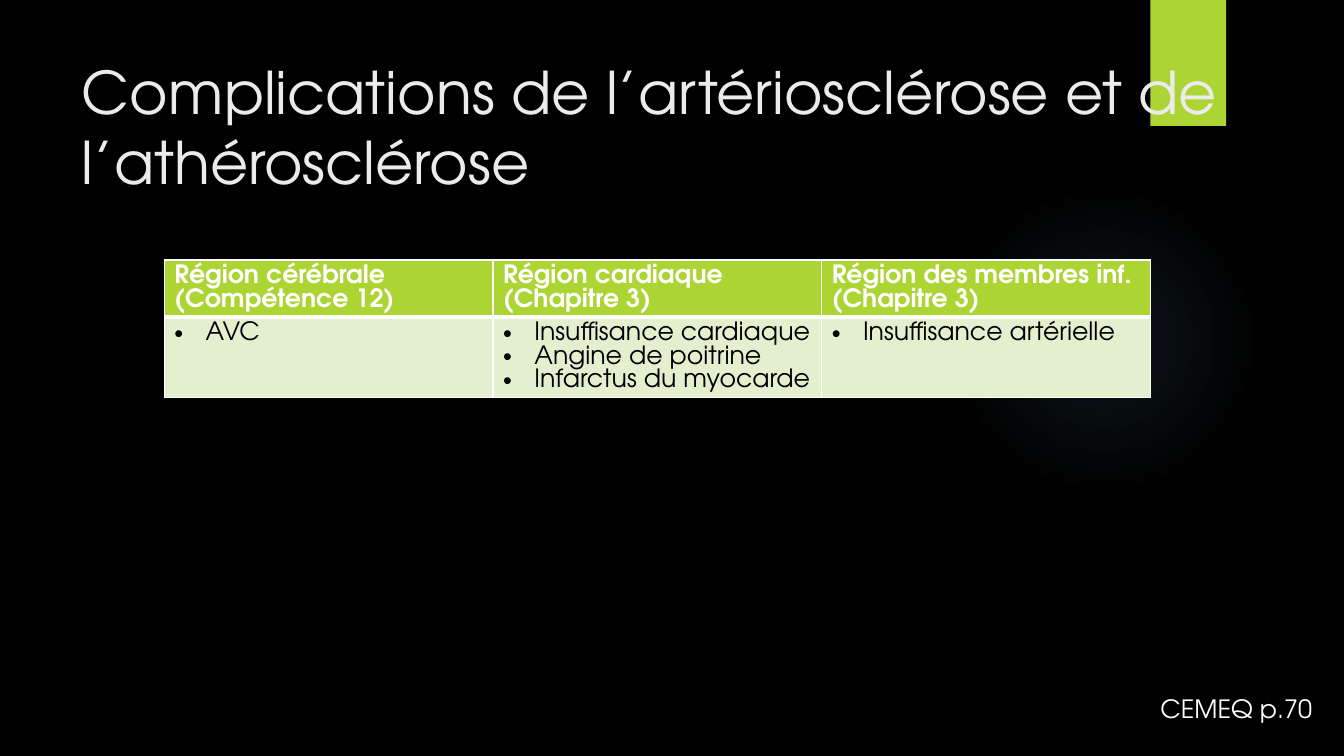
import lxml.etree
import pptx
import pptx.dml.color
import pptx.enum.shapes
import pptx.enum.text
import pptx.oxml
import pptx.oxml.ns
import pptx.util

BLACK = pptx.dml.color.RGBColor(0x00, 0x00, 0x00)
WHITE = pptx.dml.color.RGBColor(0xFF, 0xFF, 0xFF)
PALE_GREY = pptx.dml.color.RGBColor(0xEB, 0xEB, 0xEB)
LIME = pptx.dml.color.RGBColor(0xAC, 0xD4, 0x33)
PALE_LIME = pptx.dml.color.RGBColor(0xE3, 0xEF, 0xCE)
GLOW_BLUE = pptx.dml.color.RGBColor(0x7A, 0xC4, 0xF0)
FONT = "TeX Gyre Adventor"
GLOW_STOPS = [(0, 7), (36, 6), (69, 0)]
REGIONS = [
    (["Région cérébrale", "(Compétence 12)"], ["AVC"]),
    (["Région cardiaque (Chapitre 3)"],
     ["Insuffisance cardiaque", "Angine de poitrine", "Infarctus du myocarde"]),
    (["Région des membres inf.", "(Chapitre 3)"], ["Insuffisance artérielle"]),
]

deck = pptx.Presentation()
deck.slide_width = pptx.util.Inches(13.33)
deck.slide_height = pptx.util.Inches(7.5)
slide = deck.slides.add_slide(deck.slide_layouts[5])
slide.background.fill.solid()
slide.background.fill.fore_color.rgb = BLACK


def area(left, top, width, height):
    return (int(deck.slide_width * left / 100), int(deck.slide_height * top / 100),
            int(deck.slide_width * width / 100), int(deck.slide_height * height / 100))


def write(paragraph, wording, size, color, bold=False):
    run = paragraph.add_run()
    run.text = wording
    run.font.name = FONT
    run.font.size = pptx.util.Pt(size)
    run.font.color.rgb = color
    run.font.bold = bold


glow = slide.shapes.add_shape(
    pptx.enum.shapes.MSO_SHAPE.OVAL, *area(70.59, 24.4, 23.11, 41.07))
glow.shadow.inherit = False
glow.line.fill.background()
stops = "".join(
    f'<a:gs pos="{place * 1000}"><a:srgbClr val="{GLOW_BLUE}">'
    f'<a:alpha val="{opacity * 1000}"/></a:srgbClr></a:gs>'
    for place, opacity in GLOW_STOPS)
glow_fill = pptx.oxml.parse_xml(
    f'<a:gradFill {pptx.oxml.ns.nsdecls("a")} rotWithShape="1"><a:gsLst>{stops}</a:gsLst>'
    '<a:path path="circle"><a:fillToRect l="50000" t="50000" r="50000" b="50000"/></a:path>'
    '</a:gradFill>')
glow._element.spPr.find(pptx.oxml.ns.qn("a:prstGeom")).addnext(glow_fill)

ribbon = slide.shapes.add_shape(
    pptx.enum.shapes.MSO_SHAPE.RECTANGLE, *area(85.6, 0, 5.63, 16.67))
ribbon.shadow.inherit = False
ribbon.fill.solid()
ribbon.fill.fore_color.rgb = LIME
ribbon.line.fill.background()

title = slide.shapes.title
slide.shapes._spTree.append(title._element)
title.left, title.top, title.width, title.height = area(5.33, 6.67, 87.47, 20.4)
title.text_frame.word_wrap = True
title.text_frame.auto_size = pptx.enum.text.MSO_AUTO_SIZE.NONE
title.text_frame.vertical_anchor = pptx.enum.text.MSO_ANCHOR.TOP
title_line = title.text_frame.paragraphs[0]
title_line.alignment = pptx.enum.text.PP_ALIGN.LEFT
write(title_line, "Complications de l’artériosclérose et de l’athérosclérose", 42, PALE_GREY)

complications = slide.shapes.add_table(
    2, len(REGIONS), *area(12.23, 34.4, 73.37, 10.93)).table
for column, region in enumerate(REGIONS):
    for row, entries in enumerate(region):
        cell = complications.cell(row, column)
        cell.fill.solid()
        cell.fill.fore_color.rgb = PALE_LIME if row else LIME
        border_points = {"lnL": 1, "lnR": 1, "lnT": 3 if row else 1, "lnB": 1 if row else 3}
        for place, (side, points) in enumerate(border_points.items()):
            cell._tc.get_or_add_tcPr().insert(place, pptx.oxml.parse_xml(
                f'<a:{side} {pptx.oxml.ns.nsdecls("a")} w="{pptx.util.Pt(points)}">'
                f'<a:solidFill><a:srgbClr val="{WHITE}"/></a:solidFill></a:{side}>'))
        for position, entry in enumerate(entries):
            frame = cell.text_frame
            line = frame.add_paragraph() if position else frame.paragraphs[0]
            if row:
                indents = line._p.get_or_add_pPr()
                indents.set("marL", str(pptx.util.Inches(0.31)))
                indents.set("indent", str(-pptx.util.Inches(0.31)))
                lxml.etree.SubElement(
                    indents, pptx.oxml.ns.qn("a:buFont")).set("typeface", "Arial")
                lxml.etree.SubElement(
                    indents, pptx.oxml.ns.qn("a:buChar")).set("char", "•")
            write(line, entry, 18, BLACK if row else WHITE, not row)

reference = slide.shapes.add_textbox(*area(85.6, 91.07, 12.9, 5.33))
reference.text_frame.word_wrap = True
reference.text_frame.auto_size = pptx.enum.text.MSO_AUTO_SIZE.SHAPE_TO_FIT_TEXT
reference_line = reference.text_frame.paragraphs[0]
reference_line.space_after = pptx.util.Pt(6)
write(reference_line, "CEMEQ p.70", 18, WHITE)

deck.save("out.pptx")
